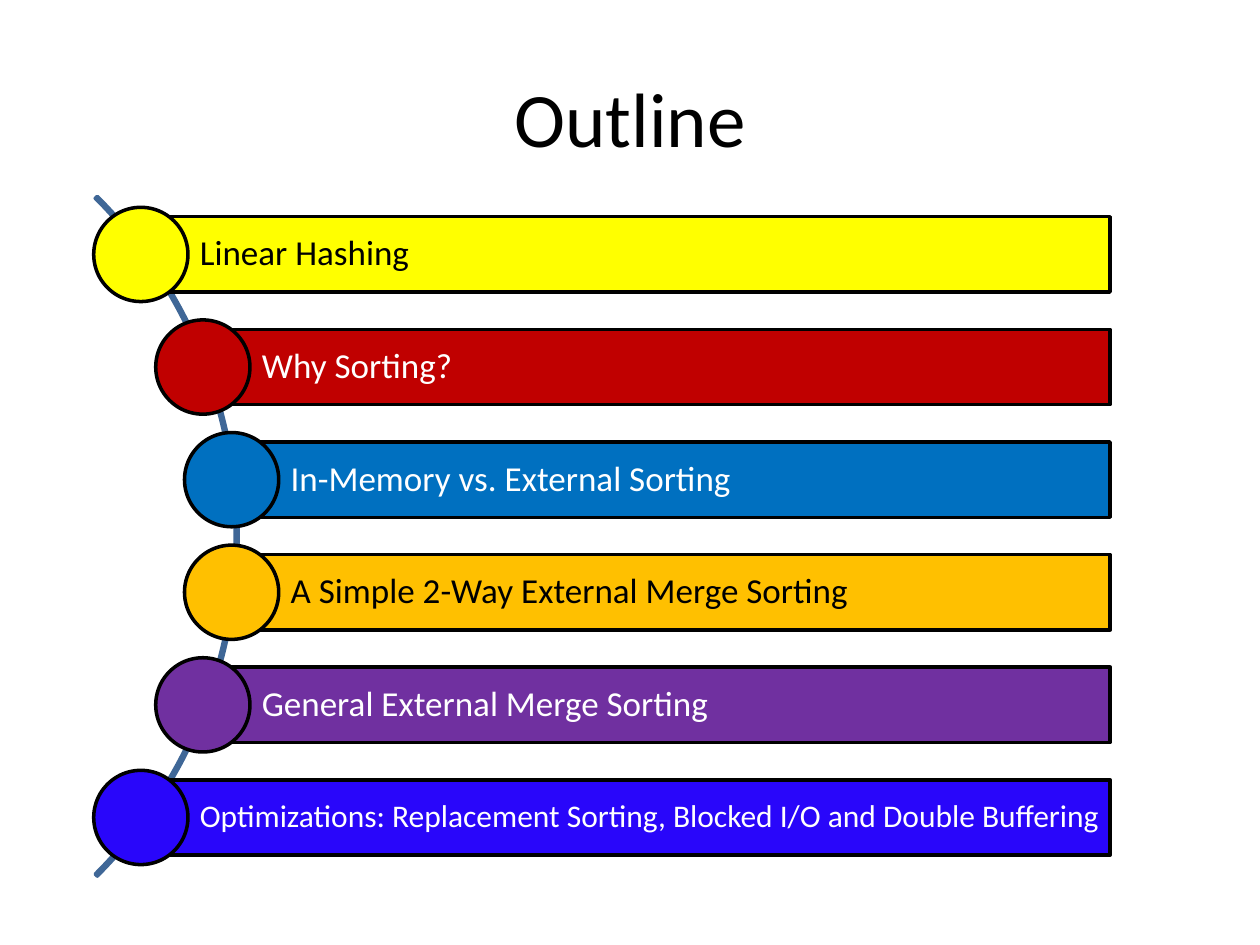
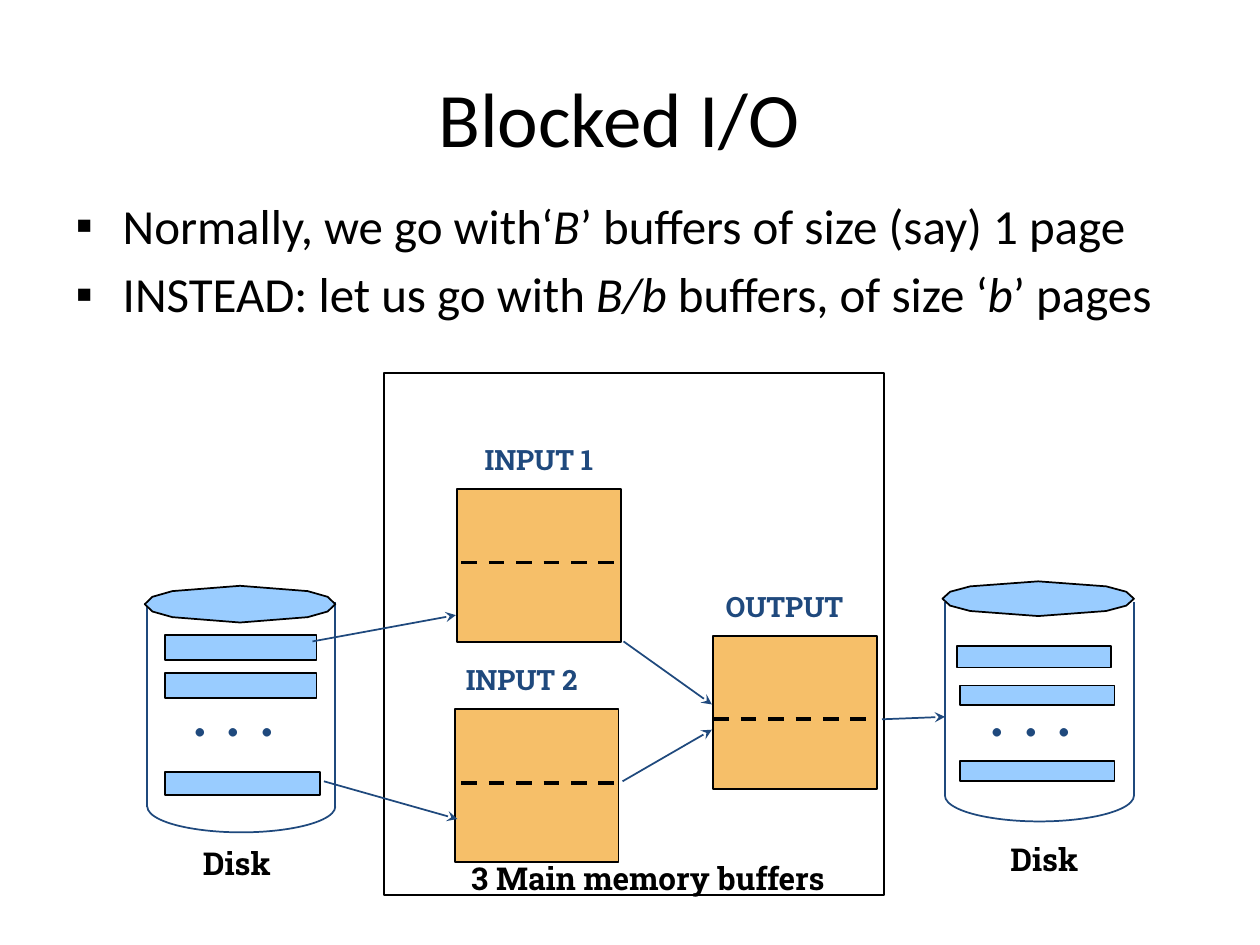
from lxml import etree
from pptx import Presentation
from pptx.dml.color import RGBColor
from pptx.enum.dml import MSO_LINE
from pptx.enum.shapes import MSO_CONNECTOR, MSO_SHAPE
from pptx.enum.text import MSO_ANCHOR, PP_ALIGN
from pptx.oxml.ns import qn
from pptx.util import Cm, Pt

RECT, OVAL = MSO_SHAPE.RECTANGLE, MSO_SHAPE.OVAL
ARC, BLOCK_ARC = MSO_SHAPE.ARC, MSO_SHAPE.BLOCK_ARC
STRAIGHT, DASH = MSO_CONNECTOR.STRAIGHT, MSO_LINE.DASH
MIDDLE, LEFT, CENTER = MSO_ANCHOR.MIDDLE, PP_ALIGN.LEFT, PP_ALIGN.CENTER

COLORS = {
    "black": "000000", "white": "FFFFFF", "navy": "1F497D", "steel": "3F6797",
    "yellow": "FFFF00", "red": "C00000", "blue": "0070C0", "amber": "FFC000",
    "purple": "7030A0", "indigo": "2906FA", "buffer": "F6BF69", "page": "99CCFF",
}
TITLE = {"name": "Calibri", "size": Pt(44)}
BODY = {"name": "Calibri", "size": Pt(28)}
TOPIC = {"name": "Calibri", "size": Pt(20)}
DOTS = {"name": "Calibri", "size": Pt(40)}
LABEL = {"name": "Roboto Slab", "size": Pt(16), "bold": True}
CAPTION = {**LABEL, "size": Pt(18)}


def rgb(name):
    return RGBColor.from_string(COLORS[name])


class Deck:
    def __init__(self):
        self.prs = Presentation()
        self.prs.slide_width, self.prs.slide_height = Cm(25.4), Cm(19.05)
        self.s = None

    def slide(self, layout, title, box):
        self.s = self.prs.slides.add_slide(self.prs.slide_layouts[layout])
        sp = self.s.shapes.title
        self.place(sp, box)
        sp.text_frame.vertical_anchor = MIDDLE
        p = sp.text_frame.paragraphs[0]
        p.alignment = CENTER
        self.run(p, title, TITLE)

    def place(self, sp, box):
        sp.left, sp.top, sp.width, sp.height = (Cm(v) for v in box)

    def run(self, p, text, style, color="black"):
        r = p.add_run()
        r.text = text
        for key, value in style.items():
            setattr(r.font, key, value)
        r.font.color.rgb = rgb(color)

    def bullets(self, items, box):
        sp = self.s.placeholders[1]
        self.place(sp, box)
        tf = sp.text_frame
        for i, item in enumerate(items):
            p = tf.add_paragraph() if i else tf.paragraphs[0]
            pPr = p._p.get_or_add_pPr()
            pPr.set("marL", str(Cm(0.95)))
            pPr.set("indent", str(-Cm(0.95)))
            etree.SubElement(pPr, qn("a:buFont")).set("typeface", "Arial")
            etree.SubElement(pPr, qn("a:buChar")).set("char", "▪")
            for text, italic in item:
                self.run(p, text, {**BODY, "italic": italic})

    def paint(self, sp, fill, line, width):
        sp.shadow.inherit = False
        if fill:
            sp.fill.solid()
            sp.fill.fore_color.rgb = rgb(fill)
        else:
            sp.fill.background()
        sp.line.color.rgb = rgb(line)
        sp.line.width = Pt(width)
        return sp

    def shape(self, kind, box, fill=None, line="black", width=1, adj=()):
        sp = self.s.shapes.add_shape(kind, *(Cm(v) for v in box))
        for i, value in enumerate(adj):
            sp.adjustments[i] = value
        return self.paint(sp, fill, line, width)

    def polygon(self, points, fill):
        points = [(Cm(x), Cm(y)) for x, y in points]
        fb = self.s.shapes.build_freeform(*points[0])
        fb.add_line_segments(points[1:], close=True)
        return self.paint(fb.convert_to_shape(), fill, "black", 1)

    def line(self, start, end, color="navy", width=1, dash=None, arrow=False):
        cx = self.s.shapes.add_connector(STRAIGHT, *(Cm(v) for v in start + end))
        cx.line.color.rgb = rgb(color)
        cx.line.width = Pt(width)
        if dash:
            cx.line.dash_style = dash
        if arrow:
            ln = cx.line._get_or_add_ln()
            etree.SubElement(ln, qn("a:tailEnd")).set("type", "stealth")
        etree.SubElement(cx._element.spPr, qn("a:effectLst"))

    def label(self, text, box, style, color="black", wrap=False):
        sp = self.s.shapes.add_textbox(*(Cm(v) for v in box))
        sp.text_frame.word_wrap = wrap
        self.run(sp.text_frame.paragraphs[0], text, style, color)

    def topic(self, text, x, y, fill, color, style):
        height, right, dot = 1.52, 22.38, 1.9
        sp = self.shape(RECT, (x, y, right - x, height), fill, width=2)
        tf = sp.text_frame
        tf.word_wrap, tf.vertical_anchor = True, MIDDLE
        tf.margin_left = Cm(1.19)
        tf.margin_right = tf.margin_top = tf.margin_bottom = Cm(0.13)
        p = tf.paragraphs[0]
        p.alignment, p.line_spacing = LEFT, 0.9
        self.run(p, text, style, color)
        self.shape(OVAL, (x - dot / 2, y + (height - dot) / 2, dot, dot), fill, width=2)

    def disk(self, left, right, bottom, lid, pages):
        # Sides and rounded base
        for x in (left, right):
            self.line((x, 12.14), (x, bottom))
        depth = 0.52
        self.shape(ARC, (left, bottom - depth, right - left, 2 * depth),
                   line="navy", adj=(0, 108))
        # Lid, mirrored from one quarter
        cx, cy, rx, ry = lid
        quarter = [(1, 0), (0.92, 0.4), (0.71, 0.71), (0, 1)]
        half = quarter + [(-x, y) for x, y in quarter[-2::-1]]
        ring = half + [(x, -y) for x, y in half[-2:0:-1]]
        self.polygon([(cx + rx * x, cy + ry * y) for x, y in ring], "page")
        for page in pages:
            self.shape(RECT, page, "page")


def outline(deck):
    deck.slide(5, "Outline", (1.27, 0.76, 22.86, 3.18))
    deck.shape(BLOCK_ARC, (-14.58, 1.12, 19.38, 19.38), line="steel", width=2,
               adj=(189, 27, 0.003))
    topics = [
        ("Linear Hashing", 2.84, "yellow", "black", TOPIC),
        ("Why Sorting?", 4.09, "red", "white", TOPIC),
        ("In-Memory vs. External Sorting", 4.67, "blue", "white", TOPIC),
        ("A Simple 2-Way External Merge Sorting", 4.67, "amber", "black", TOPIC),
        ("General External Merge Sorting", 4.09, "purple", "white", TOPIC),
        ("Optimizations: Replacement Sorting, Blocked I/O and Double Buffering",
         2.84, "indigo", "white", {**TOPIC, "size": Pt(18)}),
    ]
    for i, (text, x, fill, color, style) in enumerate(topics):
        deck.topic(text, x, 4.37 + 2.27 * i, fill, color, style)


def blocked_io(deck):
    deck.slide(1, "Blocked I/O", (0, 0.76, 24.97, 3.18))
    deck.bullets([
        [("Normally, we go with‘", False), ("B", True),
         ("’ buffers of size (say) 1 page", False)],
        [("INSTEAD: let us go with ", False), ("B/b ", True),
         ("buffers, of size ‘", False), ("b", True), ("’ pages", False)],
    ], (1.27, 3.81, 23.7, 14.4))

    # Main memory with its three buffers
    deck.shape(RECT, (7.74, 7.52, 10.08, 10.52))
    buffers = [
        ("INPUT 1", (9.22, 9.86), (9.3, 11.34), (9.52, 8.79)),
        ("INPUT 2", (9.17, 14.3), (9.3, 15.78), (9.14, 13.23)),
        ("OUTPUT", (14.38, 12.82), (14.38, 14.5), (14.38, 11.76)),
    ]
    for text, corner, (x, y), spot in buffers:
        deck.shape(RECT, corner + (3.3, 3.08), "buffer")
        deck.line((x, y), (x + 3.17, y), "black", 2.25, DASH)
        deck.label(text, spot + (2.92, 0.92), LABEL, "navy")
    deck.label("3 Main memory buffers", (9.25, 17.2, 8.51, 1.02), CAPTION, wrap=True)

    # Disks
    deck.disk(2.97, 6.76, 16.26, (4.84, 12.18, 1.92, 0.37),
              [(3.33, 12.8, 3.05, 0.5), (3.33, 13.57, 3.05, 0.5),
               (3.33, 15.57, 3.12, 0.46)])
    deck.disk(19.05, 22.86, 16.04, (20.93, 12.07, 1.93, 0.35),
              [(19.3, 13.03, 3.1, 0.43), (19.35, 13.82, 3.12, 0.4),
               (19.35, 15.34, 3.12, 0.4)])
    for dots_x, name_x, name_y in ((3.61, 3.84, 16.89), (19.68, 20.12, 16.81)):
        deck.label(". . .", (dots_x, 13.31, 2.29, 1.93), DOTS, "navy")
        deck.label("Disk", (name_x, name_y, 1.98, 1.02), CAPTION)

    # Data flow
    flows = [
        ((6.3, 12.93), (9.19, 12.4)), ((6.53, 15.75), (9.22, 16.51)),
        ((12.57, 12.93), (14.35, 14.2)), ((12.55, 15.75), (14.35, 14.71)),
        ((17.78, 14.5), (19.05, 14.45)),
    ]
    for start, end in flows:
        deck.line(start, end, arrow=True)


def main():
    deck = Deck()
    outline(deck)
    blocked_io(deck)
    deck.prs.save("out.pptx")


if __name__ == "__main__":
    main()
